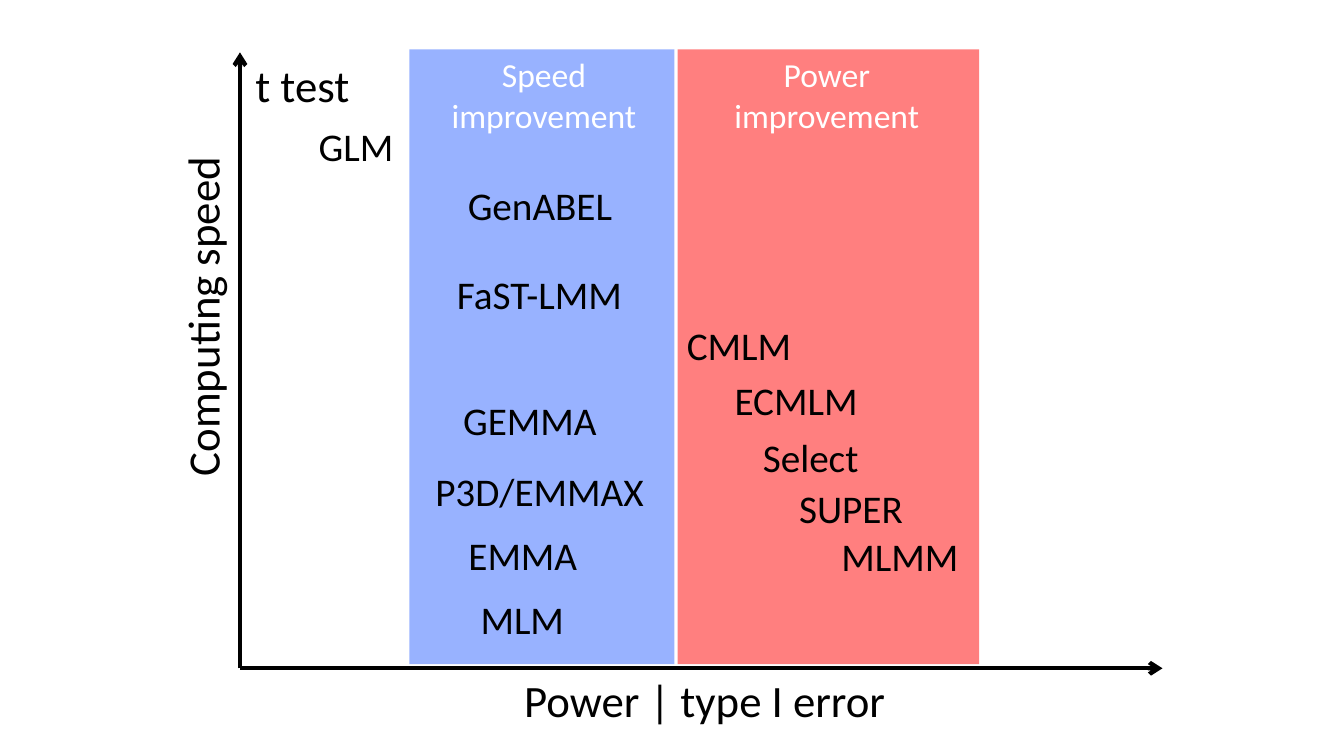
from lxml import etree
from pptx import Presentation
from pptx.dml.color import RGBColor
from pptx.enum.shapes import MSO_CONNECTOR, MSO_SHAPE
from pptx.enum.text import MSO_AUTO_SIZE, PP_ALIGN
from pptx.oxml.ns import qn
from pptx.util import Emu, Pt

RECTANGLE = MSO_SHAPE.RECTANGLE
STRAIGHT = MSO_CONNECTOR.STRAIGHT
GROW = MSO_AUTO_SIZE.SHAPE_TO_FIT_TEXT
LEFT, CENTER = PP_ALIGN.LEFT, PP_ALIGN.CENTER

EMU_PER_PX = 9144  # 100 px to the inch
FONT = "Calibri"
COLORS = {"ink": "000000", "heading": "FFFFFF", "speed": "3366FF", "power": "FF0000"}

BAND_TOP, BAND_HEIGHT = 49, 610
ORIGIN = (238, 663)
METHOD_HEIGHT = 57

# method, left, top, width
METHODS = [
    ("GLM", 297, 116, 112),
    ("MLM", 456, 586, 124),
    ("EMMA", 432, 522, 173),
    ("P3D/EMMAX", 406, 459, 258),
    ("GEMMA", 432, 388, 187),
    ("FaST-LMM", 406, 263, 258),
    ("GenABEL", 432, 175, 207),
    ("CMLM", 662, 314, 142),
    ("MLMM", 815, 523, 155),
    ("ECMLM", 694, 368, 191),
    ("Select", 723, 425, 162),
    ("SUPER", 763, 476, 162),
]


def px(*lengths):
    return [Emu(length * EMU_PER_PX) for length in lengths]


def rgb(name):
    return RGBColor.from_string(COLORS[name])


def add_band(slide, left, width, color):
    """Draw a half-transparent column of the chart area."""
    band = slide.shapes.add_shape(RECTANGLE, *px(left, BAND_TOP, width, BAND_HEIGHT))
    band.shadow.inherit = False
    band.line.fill.background()
    band.fill.solid()
    band.fill.fore_color.rgb = rgb(color)
    tint = band.fill._xPr.find(".//" + qn("a:srgbClr"))
    etree.SubElement(tint, qn("a:alpha"), val="50000")


def add_axis(slide, end):
    axis = slide.shapes.add_connector(STRAIGHT, *px(*ORIGIN, *end))
    axis.line.color.rgb = rgb("ink")
    axis.line.width = Pt(3)
    etree.SubElement(axis.line._get_or_add_ln(), qn("a:tailEnd"), type="arrow")
    etree.SubElement(axis._element.spPr, qn("a:effectLst"))


def add_text(slide, text, box, size=28, color="ink", align=CENTER, rotation=0):
    """Place text in box (left, top, width, height); each line is a paragraph."""
    label = slide.shapes.add_textbox(*px(*box))
    label.rotation = rotation
    frame = label.text_frame
    frame.word_wrap = True
    frame.auto_size = GROW
    frame.text = text
    for paragraph in frame.paragraphs:
        paragraph.alignment = align
        font = paragraph.runs[0].font
        font.name, font.size = FONT, Pt(size)
        font.color.rgb = rgb(color)


def main():
    deck = Presentation()
    deck.slide_width, deck.slide_height = px(1333, 750)
    slide = deck.slides.add_slide(deck.slide_layouts[6])

    add_band(slide, 672, 299, "power")
    add_band(slide, 406, 263, "speed")
    add_axis(slide, (1153, ORIGIN[1]))
    add_axis(slide, (ORIGIN[0], 52))

    add_text(slide, "Computing speed", (12, 262, 377, 64), size=32, align=LEFT, rotation=270)
    add_text(slide, "Power | type I error", (510, 662, 421, 64), size=32, align=LEFT)
    add_text(slide, "t test", (238, 52, 124, 64), size=32)
    for method, left, top, width in METHODS:
        add_text(slide, method, (left, top, width, METHOD_HEIGHT))

    add_text(slide, "Speed improvement", (410, BAND_TOP, 259, 91), size=24, color="heading")
    add_text(slide, "Power\nimprovement", (669, BAND_TOP, 302, 91), size=24, color="heading")

    deck.save("out.pptx")


if __name__ == "__main__":
    main()
